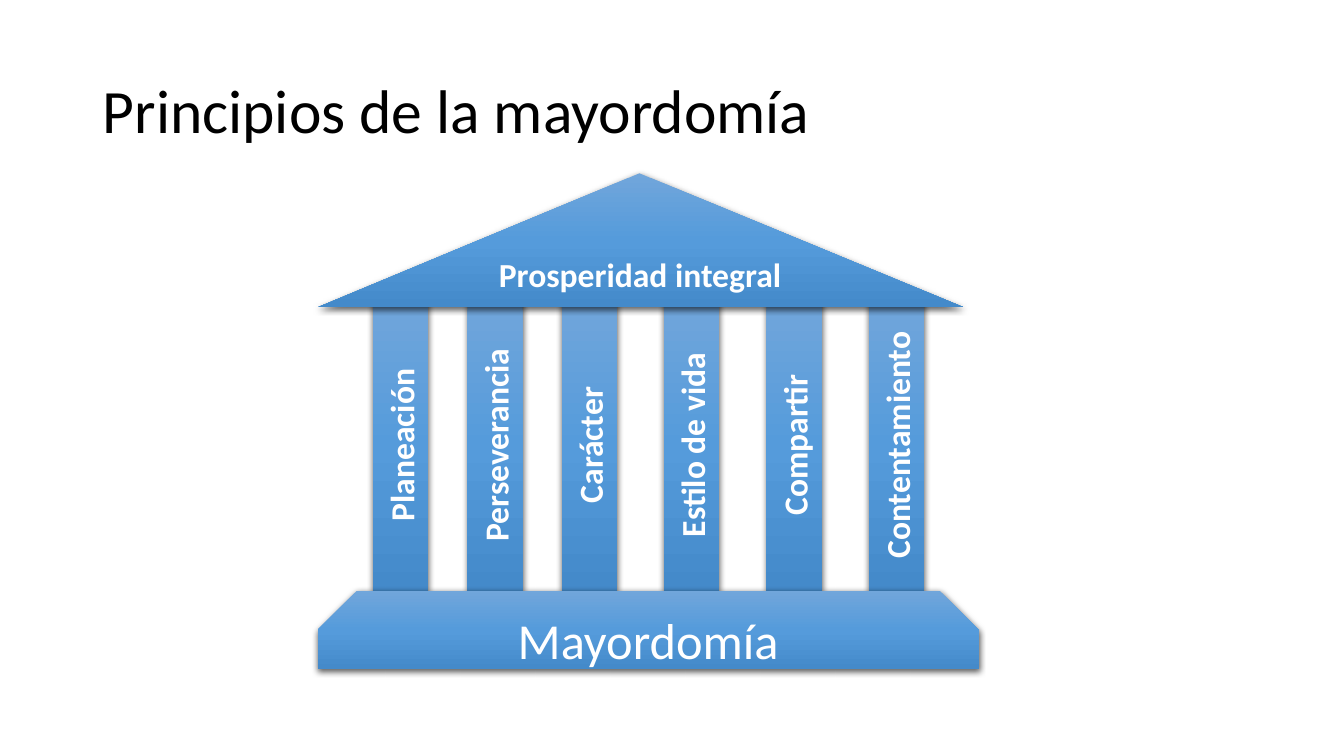
from copy import deepcopy

from pptx import Presentation
from pptx.dml.color import RGBColor
from pptx.enum.shapes import MSO_SHAPE as Preset
from pptx.enum.text import MSO_ANCHOR as Anchor, MSO_AUTO_SIZE as AutoSize, PP_ALIGN as Align
from pptx.oxml import parse_xml
from pptx.oxml.ns import nsdecls
from pptx.util import Inches, Pt

COLORS = {"light": "71A6DB", "middle": "559BDB", "dark": "448ACA",
          "shadow": "000000", "title": "000000", "label": "FFFFFF"}
FONT = "Calibri"
PRINCIPLES = ["Planeación", "Perseverancia", "Carácter",
              "Estilo de vida", "Compartir", "Contentamiento"]


def write(shape, text, size, color, align, bold=False):
    frame = shape.text_frame
    frame.text = text
    frame.word_wrap = True
    frame.auto_size = AutoSize.NONE
    frame.vertical_anchor = Anchor.MIDDLE
    para = frame.paragraphs[0]
    para.alignment = align
    font = para.runs[0].font
    font.name, font.size, font.bold = FONT, Pt(size), bold
    font.color.rgb = RGBColor.from_string(COLORS[color])
    return para


def paint_stone(shape):
    """Give the shape a vertical three-stop gradient and a soft shadow below."""
    shape.line.fill.background()
    shape.fill.gradient()
    shape.fill.gradient_angle = 270
    first_stop = shape.fill._fill._gradFill.gsLst[0]
    first_stop.addnext(deepcopy(first_stop))
    for index, (stop, name) in enumerate(zip(shape.fill.gradient_stops, ("light", "middle", "dark"))):
        stop.position = index / 2
        stop.color.rgb = RGBColor.from_string(COLORS[name])
    shape.shadow.inherit = False
    effects = shape._element.spPr.find(".//{*}effectLst")
    effects.append(parse_xml(
        f'<a:outerShdw {nsdecls("a")} blurRad="{Pt(4.5)}" dist="{Pt(1.5)}" dir="5400000" '
        f'algn="ctr" rotWithShape="0"><a:srgbClr val="{COLORS["shadow"]}">'
        '<a:alpha val="63000"/></a:srgbClr></a:outerShdw>'))


def add_stone(page, preset, box, text, size=24, bold=True):
    shape = page.shapes.add_shape(preset, *map(Inches, box))
    paint_stone(shape)
    write(shape, text, size, "label", Align.CENTER, bold)
    return shape


def add_title(page, box, text):
    title = page.shapes.title
    title.left, title.top, title.width, title.height = map(Inches, box)
    para = write(title, text, 44, "title", Align.LEFT)
    para.line_spacing = 0.9


def add_columns(page, left, top, height):
    """Stand the columns in a row, spaced a little wider from the third on."""
    width, narrow_step, wide_step = 0.55, 0.935, 1.016
    for index, principle in enumerate(PRINCIPLES):
        offset = narrow_step * min(index, 2) + wide_step * max(index - 2, 0)
        column = add_stone(page, Preset.RECTANGLE, (left + offset, top, width, height), principle)
        column.text_frame._txBody.bodyPr.set("vert", "vert270")


def add_temple(page, box):
    left, top, width, height = box
    roof_height, base_height, overlap = 1.33, 0.78, 0.08
    base_top = top + height - base_height
    column_top = top + roof_height - overlap

    add_columns(page, left + 0.55, column_top, base_top - column_top)
    base = add_stone(page, Preset.SNIP_2_SAME_RECTANGLE,
                     (left, base_top, width, base_height), "Mayordomía", 36, False)
    base.adjustments[0], base.adjustments[1] = 0.5, 0
    roof = add_stone(page, Preset.ISOSCELES_TRIANGLE,
                     (left, top, width - 0.15, roof_height), "Prosperidad integral")
    roof.adjustments[0] = 0.498


def main():
    deck = Presentation()
    deck.slide_width, deck.slide_height = Inches(13.33), Inches(7.5)
    page = deck.slides.add_slide(deck.slide_layouts[5])
    add_title(page, (0.92, 0.4, 11.5, 1.45), "Principios de la mayordomía")
    add_temple(page, (3.15, 1.72, 6.56, 4.92))
    deck.save("out.pptx")


if __name__ == "__main__":
    main()
